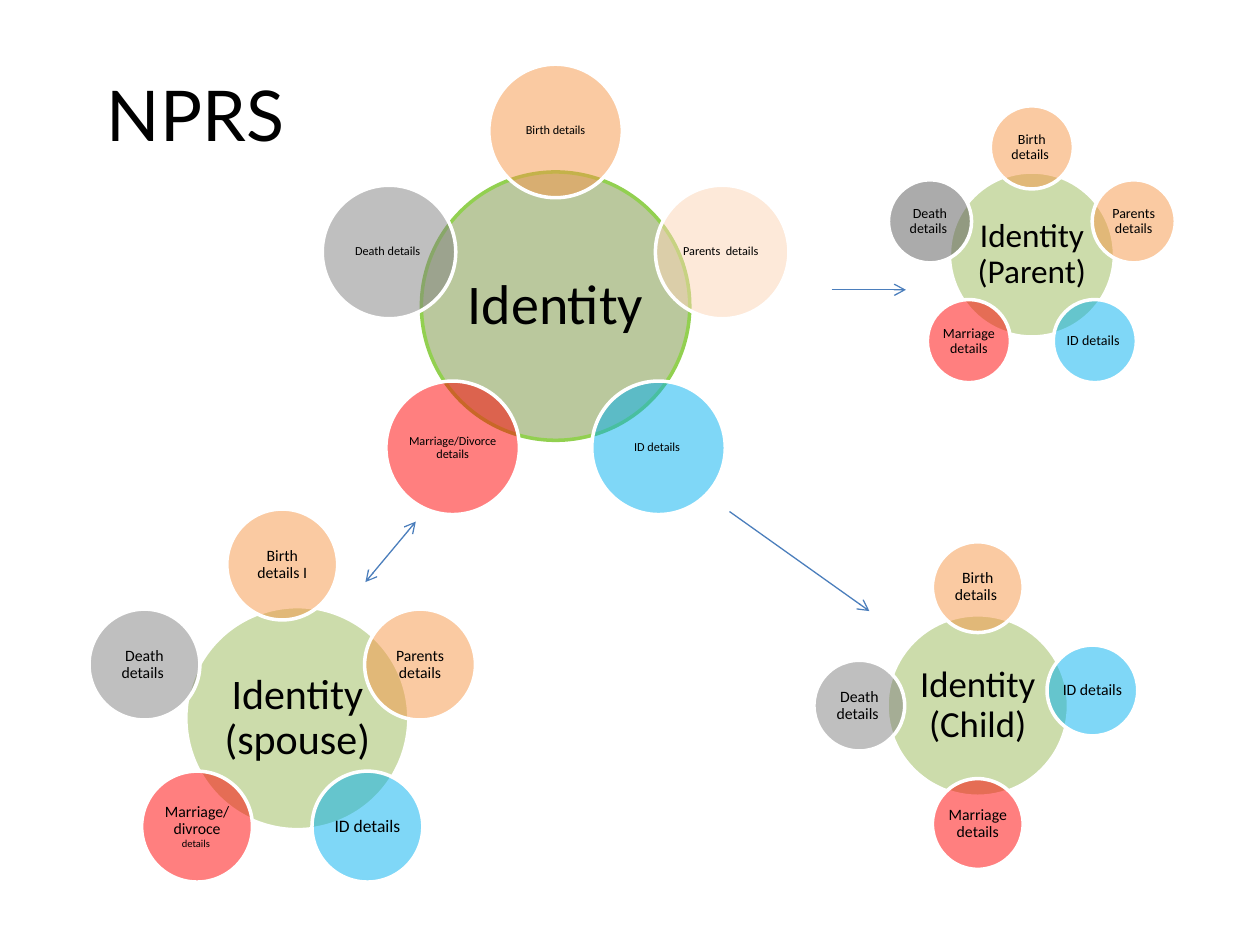
from math import cos, radians, sin

from lxml import etree
from pptx import Presentation
from pptx.dml.color import RGBColor
from pptx.enum.shapes import MSO_CONNECTOR, MSO_SHAPE
from pptx.enum.text import MSO_ANCHOR, MSO_AUTO_SIZE, PP_ALIGN
from pptx.oxml.ns import qn
from pptx.util import Pt

PX = 9144
OVAL = MSO_SHAPE.OVAL
STRAIGHT = MSO_CONNECTOR.STRAIGHT
MIDDLE = MSO_ANCHOR.MIDDLE
CENTER = PP_ALIGN.CENTER
GROW = MSO_AUTO_SIZE.SHAPE_TO_FIT_TEXT

COLORS = {
    "black": "000000", "white": "FFFFFF", "green": "9BBB59", "olive": "77933C",
    "lime": "92D050", "orange": "F79646", "peach": "FCD5B5", "blue": "00B0F0",
    "red": "FF0000", "gray": "808080", "dark": "595959", "arrow": "4B7EBC",
}


def color(name):
    return RGBColor.from_string(COLORS[name])


def add_circle(center_x, center_y, diameter, fill, outline, inset, text_runs):
    left, top = center_x - diameter / 2, center_y - diameter / 2
    circle = page.shapes.add_shape(
        OVAL, round(left * PX), round(top * PX), diameter * PX, diameter * PX)
    circle.shadow.inherit = False
    circle.fill.solid()
    circle.fill.fore_color.rgb = color(fill)
    fill_color = circle.fill._xPr.find(qn("a:solidFill"))[0]
    etree.SubElement(fill_color, qn("a:alpha"), val="50000")
    circle.line.color.rgb = color(outline)
    circle.line.width = Pt(2)
    frame = circle.text_frame
    frame.word_wrap = True
    frame.vertical_anchor = MIDDLE
    frame.margin_left = frame.margin_right = inset * PX
    frame.margin_top = frame.margin_bottom = inset * PX
    para = frame.paragraphs[0]
    para.alignment = CENTER
    para.line_spacing = 0.9
    para.font.name = "Calibri"
    para.font.color.rgb = color("black")
    for text, size in text_runs:
        span = para.add_run()
        span.text = text
        span.font.size = Pt(size)
        span.font.name = "Calibri"
        span.font.color.rgb = color("black")


deck = Presentation()
deck.slide_width = 1000 * PX
deck.slide_height = 750 * PX
page = deck.slides.add_slide(deck.slide_layouts[6])

clusters = [
    {"hub": (776, 560, 144, "green", "white", 3, [("Identity (Child)", 21)]),
     "ring": (776, 560, 94), "diameter": 72,
     "details": [
         ("orange", [("Birth details ", 9)], (0, 0)),
         ("blue", [("ID details", 9)], (-3, -12)),
         ("red", [("Marriage details", 9)], (0, 0)),
         ("gray", [("Death details ", 9)], (0, 0))]},
    {"hub": (441, 243, 213, "olive", "lime", 4, [("Identity ", 32)]),
     "ring": (441, 243, 139), "diameter": 106,
     "details": [
         ("orange", [("Birth details", 7)], (0, 0)),
         ("peach", [("Parents  details ", 7)], (0, 0)),
         ("blue", [("ID details ", 7)], (0, 0)),
         ("red", [("Marriage/Divorce details", 7)], (0, 0)),
         ("gray", [("Death details ", 7)], (0, 0))]},
    {"hub": (236, 570, 177, "green", "white", 3, [("Identity (spouse) ", 24)]),
     "ring": (224, 563, 115), "diameter": 88,
     "details": [
         ("orange", [("Birth details I", 9)], (0, 0)),
         ("orange", [("Parents details", 9)], (0, 0)),
         ("blue", [("ID details", 10)], (0, 0)),
         ("red", [("Marriage/divroce", 9), (" details ", 6)], (0, 0)),
         ("gray", [("Death details ", 9)], (0, 0))]},
    {"hub": (819, 202, 131, "green", "white", 3, [("Identity (Parent)", 19)]),
     "ring": (819, 202, 85), "diameter": 66,
     "details": [
         ("orange", [("Birth details ", 8)], (0, 0)),
         ("orange", [("Parents details", 8)], (0, 0)),
         ("blue", [("ID details ", 8)], (0, 0)),
         ("red", [("Marriage details", 8)], (0, 0)),
         ("dark", [("Death details ", 8)], (0, 0))]},
]

for cluster in clusters:
    add_circle(*cluster["hub"])
    ring_x, ring_y, radius = cluster["ring"]
    details = cluster["details"]
    for index, (fill, text_runs, (shift_x, shift_y)) in enumerate(details):
        angle = radians(360 / len(details) * index)
        add_circle(ring_x + radius * sin(angle) + shift_x,
                   ring_y - radius * cos(angle) + shift_y,
                   cluster["diameter"], fill, "white", 1, text_runs)

arrows = [
    ((660, 230), (719, 230), ["tailEnd"]),
    ((579, 406), (690, 485), ["tailEnd"]),
    ((330, 414), (290, 462), ["headEnd", "tailEnd"]),
]
for (start_x, start_y), (end_x, end_y), ends in arrows:
    arrow = page.shapes.add_connector(
        STRAIGHT, start_x * PX, start_y * PX, end_x * PX, end_y * PX)
    arrow.line.color.rgb = color("arrow")
    arrow.line.width = Pt(0.75)
    line = arrow.line._get_or_add_ln()
    for end in ends:
        etree.SubElement(line, qn(f"a:{end}"), type="arrow")
    etree.SubElement(arrow._element.spPr, qn("a:effectLst"))

title = page.shapes.add_textbox(75 * PX, 52 * PX, 235 * PX, 77 * PX)
title.text_frame.word_wrap = True
title.text_frame.auto_size = GROW
para = title.text_frame.paragraphs[0]
para.text = "NPRS"
para.font.name = "Lato"
para.font.size = Pt(40)
para.font.color.rgb = color("black")

deck.save("out.pptx")
